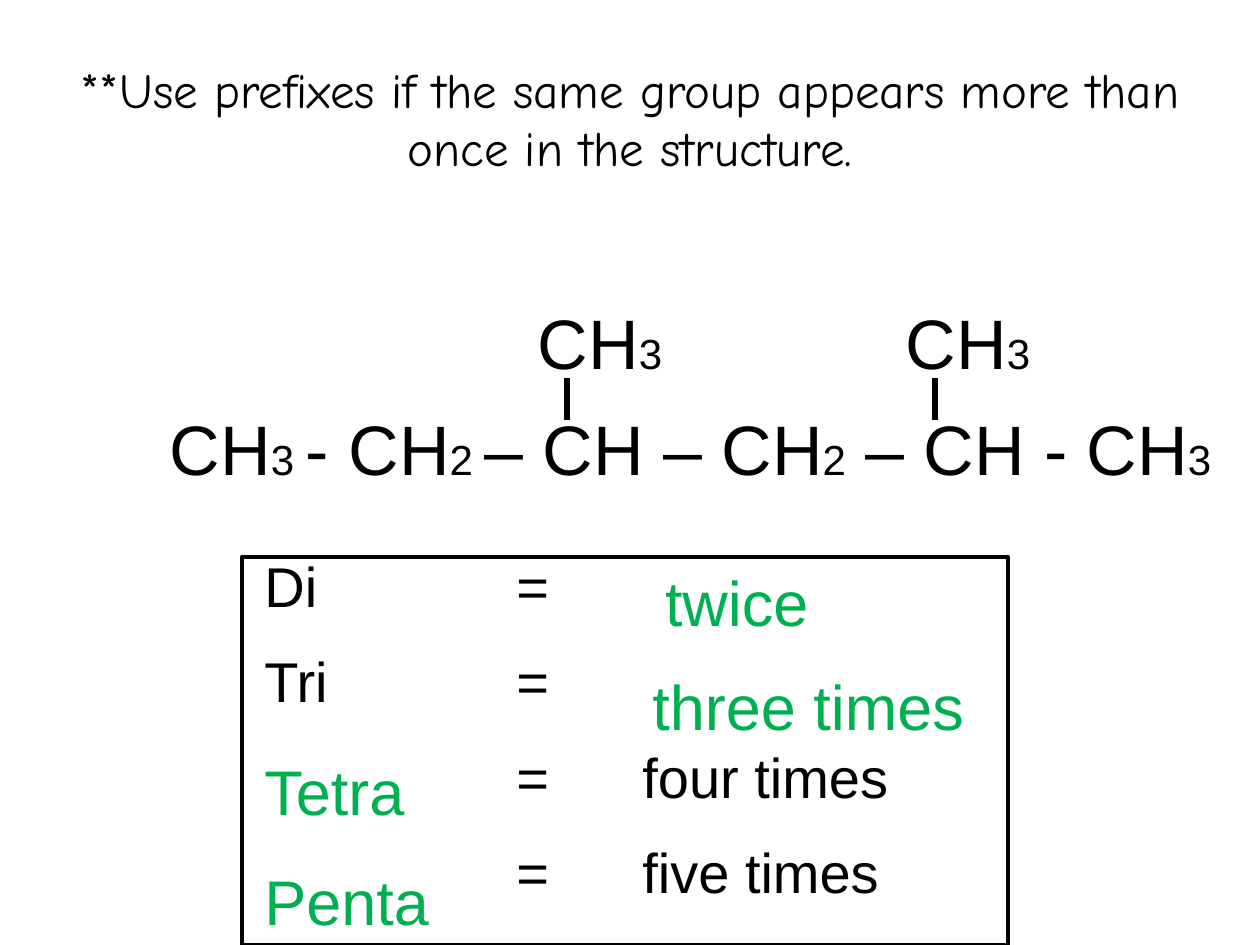
from itertools import cycle
from lxml import etree
from pptx import Presentation, util as u
from pptx.dml.color import RGBColor
from pptx.enum import shapes, text
from pptx.oxml.ns import qn

# Content: "|" switches between symbol size and count size
TITLE = "**Use prefixes if the same group appears more than once in the structure."
CHAIN = "\tCH|3 |- CH|2 |– CH – CH|2| – CH - CH|3"
BRANCH = "CH|3"
TABLE = ["Di\t\t=", "Tri\t\t=", "\t\t=\tfour times", "\t\t=\tfive times"]
ANSWERS = [  # word, left, top, width
    ("twice", 5.18, 4.42, 2.17),
    ("three times", 5.08, 5.25, 2.83),
    ("Tetra", 2, 5.92, 2.17),
    ("Penta", 2, 6.8, 2.17),
]
BONDS = [4.5, 7.42]
TABS = [1, 2, 3]

THEME = dict(
    ink=RGBColor(0, 0, 0), key=RGBColor(0x00, 0xB0, 0x50),
    body="Arial", head="Comic Neue",
    title=28, row=32, answer=36, atom=40, count=24,
    edge=2.25, bond=3, gap=16,
)

deck = Presentation()
deck.slide_width, deck.slide_height = u.Inches(10), u.Inches(7.5)
slide = deck.slides.add_slide(deck.slide_layouts[6])


def inch(*vals):
    return [u.Inches(v) for v in vals]


def write(lines, place, sizes, color="ink", font="body", align="LEFT", wrap=True):
    """Add a text box; parts split by "|" take the sizes in turn."""
    frame = slide.shapes.add_textbox(*inch(*place)).text_frame
    frame.word_wrap = wrap
    frame.vertical_anchor = text.MSO_ANCHOR.TOP
    for n, line in enumerate(lines):
        para = frame.add_paragraph() if n else frame.paragraphs[0]
        para.alignment = getattr(text.PP_ALIGN, align)
        if n:
            para.space_before = u.Pt(THEME["gap"])
        if "\t" in line:
            stops = etree.SubElement(para._p.get_or_add_pPr(), qn("a:tabLst"))
            for stop in inch(*TABS):
                etree.SubElement(stops, qn("a:tab"), pos=str(int(stop)), algn="l")
        for part, size in zip(line.split("|"), cycle(sizes)):
            run = para.add_run()
            run.text = part
            run.font.size = u.Pt(THEME[size])
            run.font.name = THEME[font]
            run.font.color.rgb = THEME[color]


# Title
write([TITLE], (0.5, 0.42, 9, 1.5), ["title"], font="head", align="CENTER")

# Prefix table in its frame
write(TABLE, (2, 4.33, 5.92, 3.03), ["row"])
box = slide.shapes.add_shape(shapes.MSO_SHAPE.RECTANGLE, *inch(1.92, 4.42, 6.08, 3.08))
box.shadow.inherit = False
box.fill.background()
box.line.color.rgb = THEME["ink"]
box.line.width = u.Pt(THEME["edge"])

# Answers
for word, left, top, width in ANSWERS:
    write([word], (left, top, width, 0.7), ["answer"], color="key")

# Molecule: bonds with their branches, then the main chain
for x in BONDS:
    bond = slide.shapes.add_connector(shapes.MSO_CONNECTOR.STRAIGHT, *inch(x, 3, x, 3.33))
    bond.line.color.rgb = THEME["ink"]
    bond.line.width = u.Pt(THEME["bond"])
    etree.SubElement(bond._element.spPr, qn("a:effectLst"))
    write([BRANCH], (x - 0.33, 2.33, 1.19, 0.77), ["atom", "count"], wrap=False)
write([CHAIN], (0.25, 3.17, 9.75, 0.77), ["atom", "count"])

deck.save("out.pptx")
